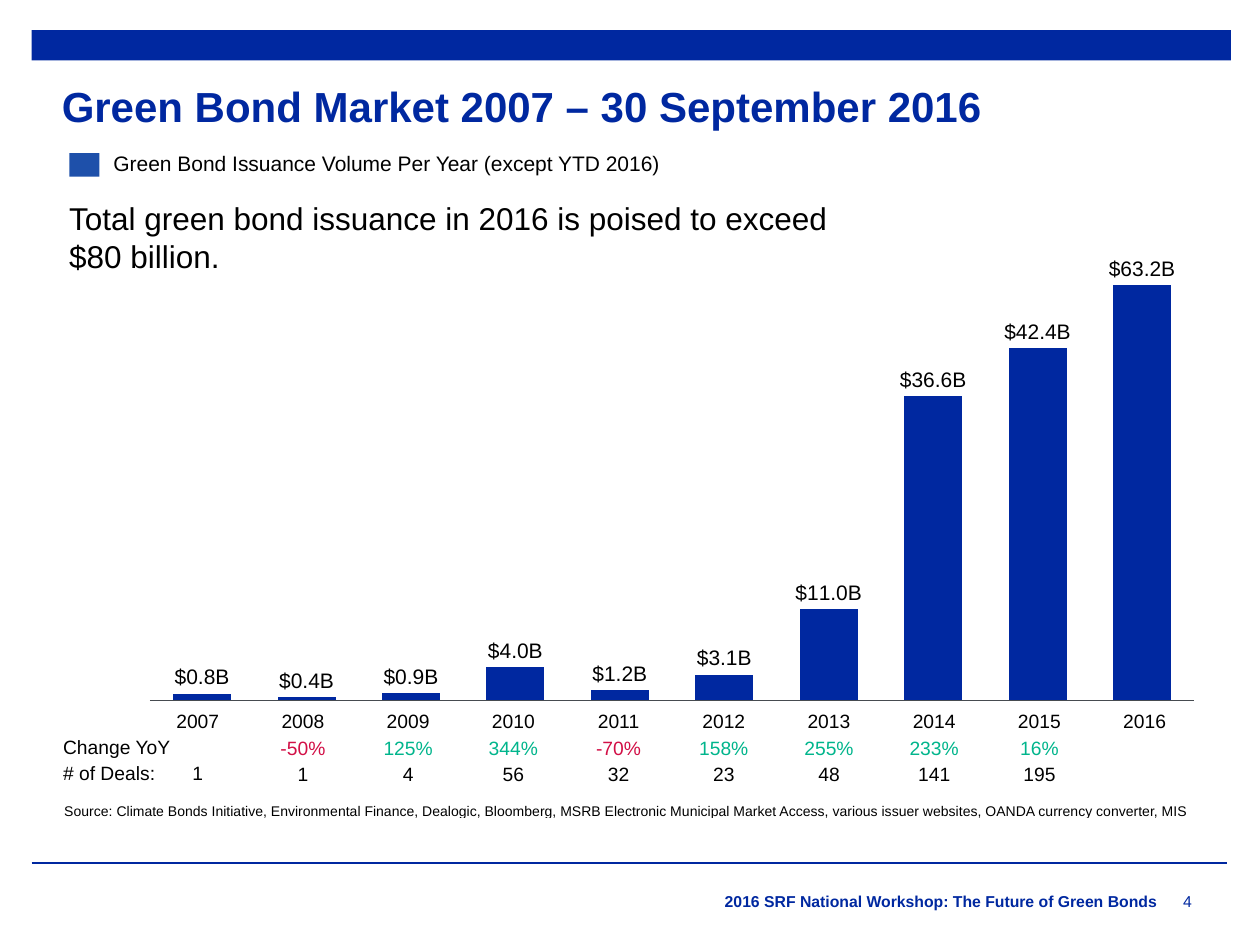
"""Build the green bond market slide."""
from dataclasses import dataclass
from typing import Optional

import pptx
import pptx.chart.data
import pptx.dml.color
import pptx.enum.chart
import pptx.enum.shapes
import pptx.enum.text
import pptx.oxml
import pptx.oxml.ns
import pptx.util

RGB = pptx.dml.color.RGBColor
Pt = pptx.util.Pt
ALIGN = pptx.enum.text.PP_ALIGN
ANCHOR = pptx.enum.text.MSO_ANCHOR
RECT = pptx.enum.shapes.MSO_SHAPE.RECTANGLE

NAVY = RGB(0x00, 0x28, 0xA0)
BLUE = RGB(0x1E, 0x50, 0xAA)
GREEN = RGB(0x00, 0xB5, 0x8C)
RED = RGB(0xD2, 0x0F, 0x46)
BLACK = RGB(0x00, 0x00, 0x00)
GREY = RGB(0x46, 0x4B, 0x50)

WIDE = pptx.util.Inches(10)
HIGH = pptx.util.Inches(7.5)
COL_X, COL_STEP, COL_W = 15.7, 8.35, 4
ROW_Y, ROW_H = 75.07, 2.71
ROW_GAP = 14.65


@dataclass(frozen=True)
class Box:
    """A frame in percent of the slide's width and height."""
    x: float
    y: float
    w: float
    h: float

    def place(self) -> tuple[int, int, int, int]:
        """Return left, top, width and height as lengths."""
        return (int(WIDE * self.x / 100), int(HIGH * self.y / 100),
                int(WIDE * self.w / 100), int(HIGH * self.h / 100))


@dataclass(frozen=True)
class Line:
    """One paragraph with its colour and the space before it."""
    text: str
    color: RGB = BLACK
    lead: float = 0


@dataclass(frozen=True)
class Year:
    """One column of the chart and of the figures below it."""
    name: str
    value: float
    change: Optional[int] = None
    deals: Optional[int] = None


YEARS = [
    Year("2007", 0.8, None, 1), Year("2008", 0.4, -50, 1),
    Year("2009", 0.9, 125, 4), Year("2010", 4, 344, 56),
    Year("2011", 1.2, -70, 32), Year("2012", 3.1, 158, 23),
    Year("2013", 11, 255, 48), Year("2014", 36.6, 233, 141),
    Year("2015", 42.4, 16, 195), Year("2016", 50),
]


def write(frame, *lines: Line, size: float = 11, bold: bool = False, align=ALIGN.LEFT,
          anchor=ANCHOR.TOP, inset: tuple = (0, 0, 0, 0), wrap: bool = True,
          after: float = 0, pitch: Optional[float] = None) -> None:
    """Fill a text frame with formatted paragraphs."""
    frame.word_wrap = wrap
    frame.vertical_anchor = anchor
    frame.margin_left, frame.margin_top, frame.margin_right, frame.margin_bottom = map(Pt, inset)
    for i, line in enumerate(lines):
        para = frame.add_paragraph() if i else frame.paragraphs[0]
        para.alignment = align
        para.space_before, para.space_after = Pt(line.lead), Pt(after)
        if pitch:
            para.line_spacing = pitch
        run = para.add_run()
        run.text = line.text
        style(run.font, size, line.color, bold)


def style(font, size: float, color: RGB, bold: bool = False) -> None:
    """Set a font's face, size, colour and weight."""
    font.name, font.size, font.bold = "Arial", Pt(size), bold
    font.color.rgb = color


def add_text(slide, box: Box, *lines: Line, **form) -> None:
    """Add a text box."""
    write(slide.shapes.add_textbox(*box.place()).text_frame, *lines, **form)


def add_block(slide, box: Box, color: RGB) -> None:
    """Add a plain filled rectangle."""
    block = slide.shapes.add_shape(RECT, *box.place())
    block.shadow.inherit = False
    block.fill.solid()
    block.fill.fore_color.rgb = color
    block.line.fill.background()


def add_rule(slide, box: Box, color: RGB) -> None:
    """Add a thin straight line across the box."""
    x, y, w, h = box.place()
    kind = pptx.enum.shapes.MSO_CONNECTOR.STRAIGHT
    rule = slide.shapes.add_connector(kind, x, y, x + w, y + h)
    rule.line.color.rgb = color
    rule.line.width = Pt(1)
    rule._element.spPr.append(pptx.oxml.parse_xml(
        f'<a:effectLst {pptx.oxml.ns.nsdecls("a")}/>'))


def add_bars(slide, box: Box) -> None:
    """Add the column chart of yearly volume."""
    enum = pptx.enum.chart
    data = pptx.chart.data.CategoryChartData()
    data.categories = [str(i + 1) for i in range(len(YEARS))]
    data.add_series("Series 1", [year.value for year in YEARS])
    chart = slide.shapes.add_chart(
        enum.XL_CHART_TYPE.COLUMN_CLUSTERED, *box.place(), data).chart
    chart.has_legend = chart.has_title = False
    style(chart.font, 12, BLACK)

    for axis in (chart.category_axis, chart.value_axis):
        axis.has_major_gridlines = False
        axis.major_tick_mark = axis.minor_tick_mark = enum.XL_TICK_MARK.NONE
        axis.tick_label_position = enum.XL_TICK_LABEL_POSITION.NONE
    chart.category_axis.format.line.color.rgb = GREY
    chart.category_axis.format.line.width = Pt(1)
    chart.value_axis.format.line.fill.background()
    chart.value_axis.minimum_scale, chart.value_axis.maximum_scale = 0, 60

    plot = chart.plots[0]
    plot.gap_width = 80
    plot.vary_by_categories = False
    bars = plot.series[0]
    bars.format.fill.solid()
    bars.format.fill.fore_color.rgb = NAVY
    tags = bars.data_labels
    tags.show_value = True
    tags.position = enum.XL_LABEL_POSITION.OUTSIDE_END
    tags.number_format, tags.number_format_is_linked = '\\$0.0"B"', False
    style(tags.font, 12, BLACK)
    last = bars.points[len(YEARS) - 1].data_label
    run = last.text_frame.paragraphs[0].add_run()
    run.text = "$63.2B"
    style(run.font, 12, BLACK)
    last.position = enum.XL_LABEL_POSITION.OUTSIDE_END

    area = chart._chartSpace.chart.plotArea
    for old in area.findall(pptx.oxml.ns.qn("c:layout")):
        area.remove(old)
    modes = '<c:layoutTarget val="inner"/><c:xMode val="edge"/><c:yMode val="edge"/>'
    sides = "".join(f'<c:{side} val="{share}"/>' for side, share in
                    zip("xywh", (0.013, 0.05, 0.981, 0.92)))
    area.insert(0, pptx.oxml.parse_xml(
        f'<c:layout {pptx.oxml.ns.nsdecls("c")}><c:manualLayout>'
        f'{modes}{sides}</c:manualLayout></c:layout>'))


def add_year(slide, index: int, year: Year) -> None:
    """Add the figures below one column."""
    lines = [Line(year.name)]
    if year.change is not None:
        lines.append(Line(f"{year.change}%", RED if year.change < 0 else GREEN))
    if year.deals is not None:
        lines.append(Line(str(year.deals), lead=ROW_GAP if year.change is None else 0))
    box = Box(COL_X + index * COL_STEP - COL_W / 2, ROW_Y, COL_W, 3 * ROW_H)
    add_text(slide, box, *lines, align=ALIGN.CENTER, after=2, wrap=False)


def add_source(slide, box: Box, text: str) -> None:
    """Add the one-cell table that holds the source."""
    table = slide.shapes.add_table(1, 1, *box.place()).table
    table.first_row = table.horz_banding = False
    cell = table.cell(0, 0)
    cell.fill.background()
    cell.margin_left = cell.margin_top = cell.margin_right = Pt(0.72)
    cell.margin_bottom = 0
    cell.vertical_anchor = ANCHOR.BOTTOM
    run = cell.text_frame.paragraphs[0].add_run()
    run.text = text
    style(run.font, 8, BLACK)


def main() -> None:
    """Build and save the slide."""
    deck = pptx.Presentation()
    deck.slide_width, deck.slide_height = WIDE, HIGH
    slide = deck.slides.add_slide(deck.slide_layouts[5])
    add_rule(slide, Box(2.5, 91.33, 94.9, 0), NAVY)
    add_block(slide, Box(2.5, 3.2, 95.2, 3.2), NAVY)
    add_text(slide, Box(47.9, 94.4, 43.9, 2.27),
             Line("2016 SRF National Workshop: The Future of Green Bonds", NAVY),
             size=9, bold=True, align=ALIGN.RIGHT)
    add_bars(slide, Box(10.8, 18.53, 84.5, 57.33))
    title = slide.shapes.title
    title.left, title.top, title.width, title.height = Box(4.9, 9.33, 90, 4.53).place()
    write(title.text_frame, Line("Green Bond Market 2007 – 30 September 2016", NAVY),
          size=24, bold=True, pitch=0.85)
    for index, year in enumerate(YEARS):
        add_year(slide, index, year)
    add_text(slide, Box(5, ROW_Y + ROW_H, 8.8, 2 * ROW_H),
             Line("Change YoY"), Line("# of Deals:"), after=2)
    add_block(slide, Box(5.5, 16.2, 2.4, 2.5), BLUE)
    add_text(slide, Box(9, 11.33, 45, 11.87),
             Line("Green Bond Issuance Volume Per Year (except YTD 2016)"),
             size=12, anchor=ANCHOR.MIDDLE)
    add_source(slide, Box(5, 83.87, 90.3, 2.8),
               "Source: Climate Bonds Initiative, Environmental Finance, Dealogic, Bloomberg, "
               "MSRB Electronic Municipal Market Access, various issuer websites, "
               "OANDA currency converter, MIS")
    add_text(slide, Box(4.5, 20.4, 64.3, 9.47),
             Line("Total green bond issuance in 2016 is poised to exceed $80 billion."),
             size=18, inset=(7.2, 3.6, 7.2, 3.6))
    add_text(slide, Box(93.9, 94.4, 4.7, 2.27), Line("4", NAVY), size=9)
    deck.save("out.pptx")


if __name__ == "__main__":
    main()
